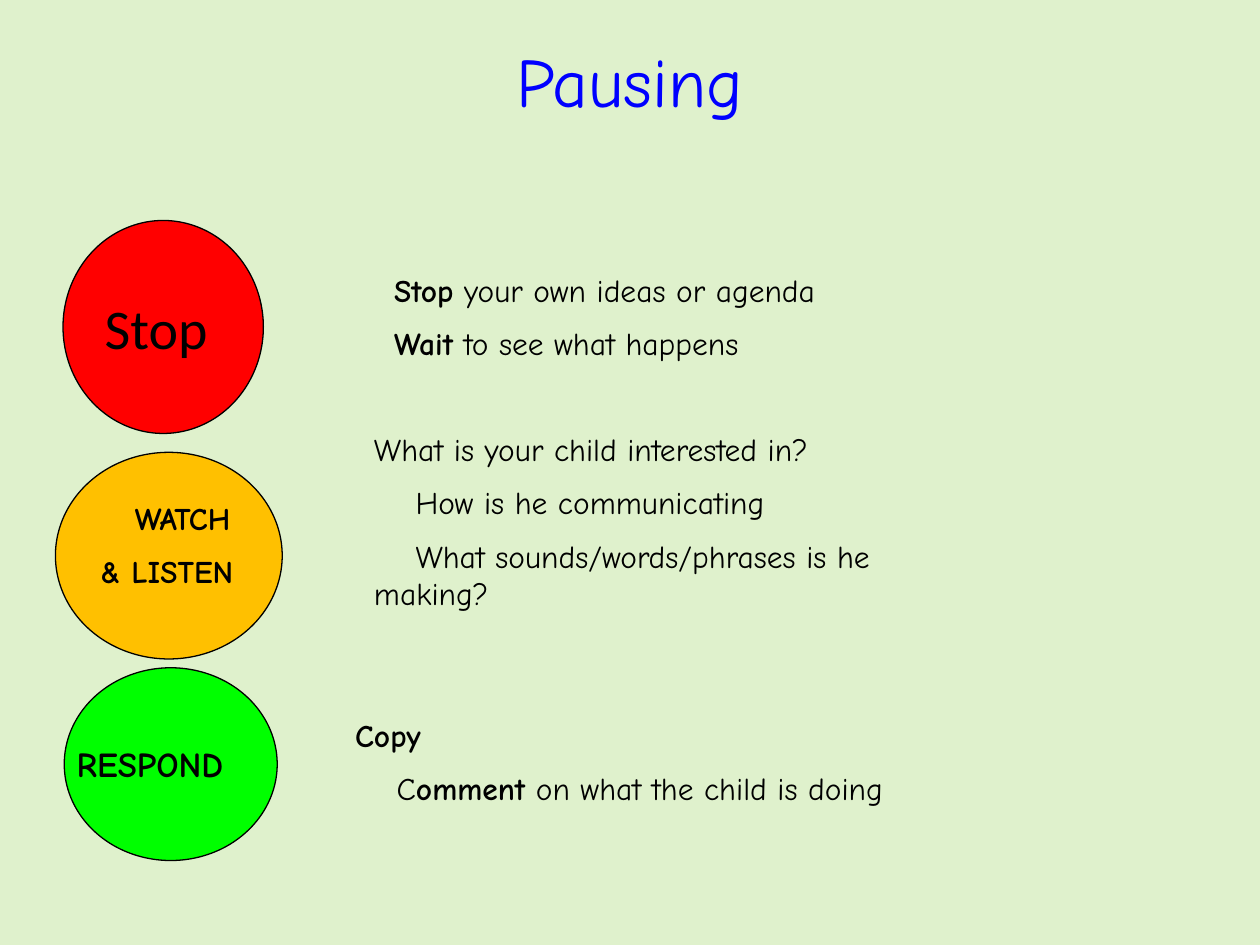
from dataclasses import dataclass

from pptx import Presentation
from pptx.dml.color import RGBColor
from pptx.enum.shapes import MSO_SHAPE
from pptx.enum.text import MSO_ANCHOR, PP_ALIGN
from pptx.util import Inches, Pt

BACKGROUND = RGBColor(0xDF, 0xF1, 0xCC)
BLUE = RGBColor(0x00, 0x00, 0xFF)
BLACK = RGBColor(0x00, 0x00, 0x00)
RED = RGBColor(0xFF, 0x00, 0x00)
AMBER = RGBColor(0xFF, 0xC0, 0x00)
GREEN = RGBColor(0x00, 0xFF, 0x00)
BODY_FONT = "Comic Neue"
LABEL_FONT = "Calibri"
FIRST_LINE_INDENT = Inches(0.33)


@dataclass(frozen=True)
class Light:
    box: tuple[float, float, float, float]
    color: RGBColor


@dataclass(frozen=True)
class Line:
    runs: tuple[tuple[str, bool], ...]  # text and whether it is bold
    indented: bool = False
    align: PP_ALIGN = PP_ALIGN.LEFT


@dataclass(frozen=True)
class TextBlock:
    box: tuple[float, float, float, float]
    lines: tuple[Line, ...]
    size: float = 18
    color: RGBColor = BLACK


LIGHTS = (
    Light((0.5, 1.75, 1.59, 1.69), RED),
    Light((0.44, 3.59, 1.8, 1.64), AMBER),
    Light((0.51, 5.3, 1.69, 1.53), GREEN),
)

TITLE = TextBlock((0.5, 0.3, 9, 1.25),
                  (Line((("Pausing", False),), align=PP_ALIGN.CENTER),), 39.6, BLUE)

TEXT_BLOCKS = (
    # Labels on the lights
    TextBlock((0.7, 3.91, 1.5, 0.85), (
        Line((("WATCH", True),), align=PP_ALIGN.CENTER),
        Line((("& LISTEN", True),)),
    )),
    TextBlock((0.51, 5.84, 1.57, 0.43), (Line((("RESPOND", True),)),), 20),
    # Advice beside the lights
    TextBlock((3.03, 2.1, 5, 0.86), (
        Line((("Stop", True), (" your own ideas or agenda", False))),
        Line((("Wait", True), (" to see what happens", False))),
    )),
    TextBlock((2.87, 3.36, 5, 1.62), (
        Line((("What is your child interested in?", False),)),
        Line((("How is he communicating", False),), indented=True),
        Line((("What sounds/words/phrases is he making?", False),), indented=True),
    )),
    TextBlock((2.72, 5.63, 5, 0.86), (
        Line((("Copy", True),)),
        Line((("C", False), ("omment", True), (" on what the child is doing", False)),
             indented=True),
    )),
)


def write_text(frame, lines: tuple[Line, ...], *, size: float, color: RGBColor = BLACK,
               font: str = BODY_FONT) -> None:
    for index, line in enumerate(lines):
        paragraph = frame.add_paragraph() if index else frame.paragraphs[0]
        paragraph.alignment = line.align
        if index:
            paragraph.space_before = Pt(size / 2)
        if line.indented:
            paragraph._p.get_or_add_pPr().set("indent", str(FIRST_LINE_INDENT))
        for text, bold in line.runs:
            run = paragraph.add_run()
            run.text = text
            run.font.name = font
            run.font.size = Pt(size)
            run.font.bold = bold
            run.font.color.rgb = color


def add_light(slide, light: Light):
    shape = slide.shapes.add_shape(MSO_SHAPE.OVAL, *map(Inches, light.box))
    shape.shadow.inherit = False
    shape.fill.solid()
    shape.fill.fore_color.rgb = light.color
    shape.line.color.rgb = BLACK
    shape.line.width = Pt(0.75)
    return shape


def add_text_block(slide, block: TextBlock):
    shape = slide.shapes.add_textbox(*map(Inches, block.box))
    shape.text_frame.word_wrap = True
    write_text(shape.text_frame, block.lines, size=block.size, color=block.color)
    return shape


def main() -> None:
    presentation = Presentation()
    presentation.slide_width = Inches(10)
    presentation.slide_height = Inches(7.5)
    slide = presentation.slides.add_slide(presentation.slide_layouts[6])
    slide.background.fill.solid()
    slide.background.fill.fore_color.rgb = BACKGROUND

    # Title
    title = add_text_block(slide, TITLE)
    title.text_frame.margin_top = 0

    # Traffic lights, the first with its own label
    stop_light, *_ = [add_light(slide, light) for light in LIGHTS]
    stop_frame = stop_light.text_frame
    stop_frame.word_wrap = False
    stop_frame.vertical_anchor = MSO_ANCHOR.MIDDLE
    write_text(stop_frame, (Line((("Stop", False),)),), size=32, font=LABEL_FONT)

    # Labels and advice
    for block in TEXT_BLOCKS:
        add_text_block(slide, block)

    presentation.save("out.pptx")


if __name__ == "__main__":
    main()
